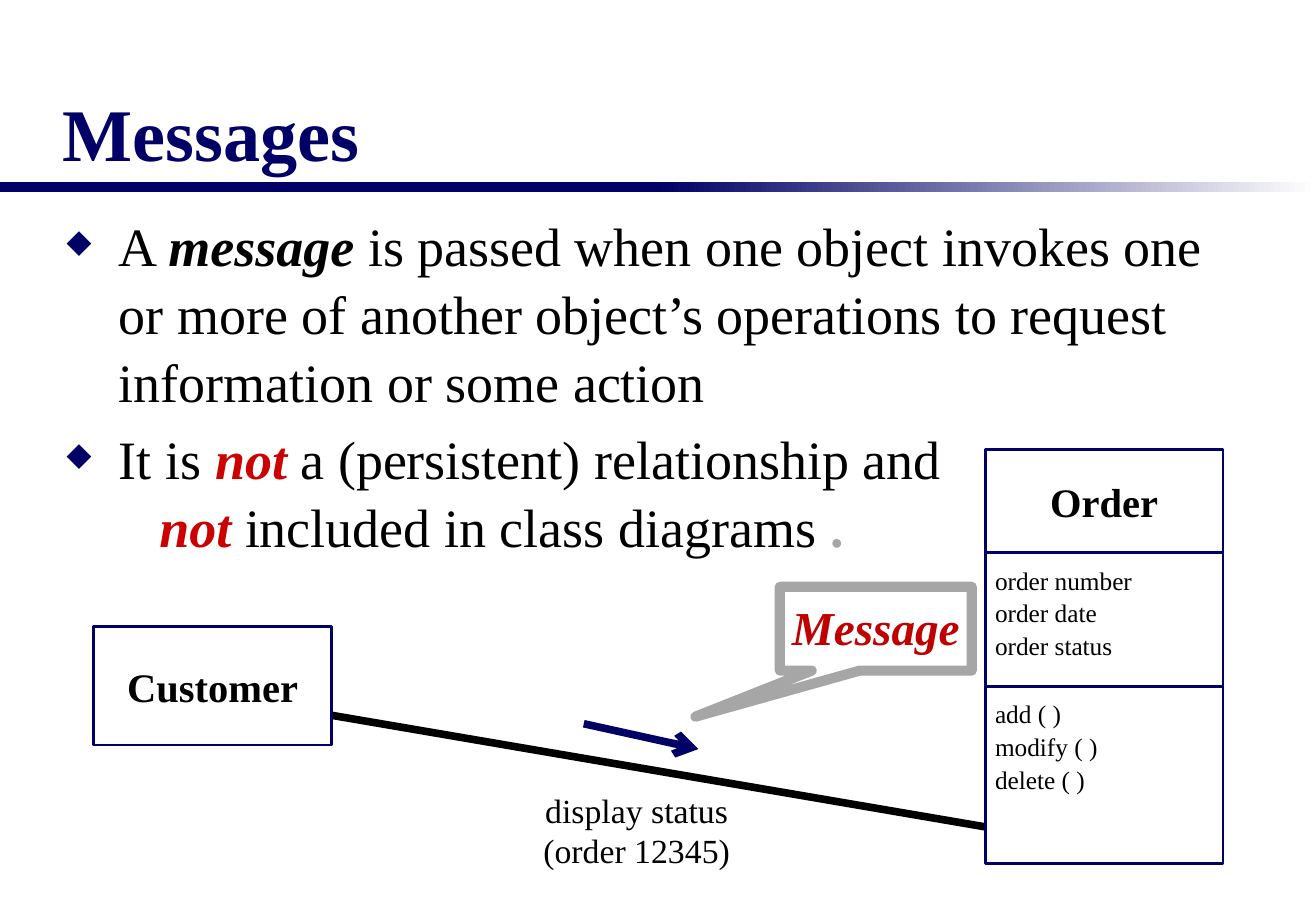
from collections import namedtuple
from dataclasses import dataclass

from lxml import etree
from pptx import Presentation
from pptx import util as u
from pptx.dml.color import RGBColor
from pptx.enum import shapes, text
from pptx.oxml.ns import qn

Box = namedtuple("Box", "left top width height")
Pt = u.Pt


@dataclass(frozen=True)
class Theme:
    font: str = "Times New Roman"
    navy: str = "000066"
    black: str = "000000"
    white: str = "FFFFFF"
    grey: str = "A6A6A6"
    red: str = "CC0000"
    dark_red: str = "C00000"
    title: float = 44
    body: float = 32
    callout: float = 28
    name: float = 24
    label: float = 20
    member: float = 15
    outline: float = 1.5
    heavy: float = 4.5
    frame: float = 6


THEME = Theme()


def color(code):
    return RGBColor.from_string(code)


def lengths(box):
    return [Pt(value) for value in box]


def add_span(para, words, size, ink=THEME.black, bold=False, italic=False):
    span = para.add_run()
    span.text = words
    span.font.name = THEME.font
    span.font.size = Pt(size)
    span.font.color.rgb = color(ink)
    span.font.bold = bold
    span.font.italic = italic


def set_frame(shape, insets=(0, 0, 0, 0), anchor=text.MSO_ANCHOR.TOP, wrap=True):
    frame = shape.text_frame
    frame.word_wrap = wrap
    frame.vertical_anchor = anchor
    frame.margin_left, frame.margin_top, frame.margin_right, frame.margin_bottom = map(Pt, insets)
    return frame


def write_lines(frame, lines, align=text.PP_ALIGN.LEFT, after=0, spacing=1, **style):
    for index, words in enumerate(lines):
        para = frame.paragraphs[0] if index == 0 else frame.add_paragraph()
        para.alignment = align
        para.space_after = Pt(after)
        para.line_spacing = spacing
        add_span(para, words, **style)


def add_panel(page, box, kind=shapes.MSO_SHAPE.RECTANGLE, fill=None, line=None, weight=THEME.outline):
    panel = page.shapes.add_shape(kind, *lengths(box))
    panel.shadow.inherit = False
    if fill:
        panel.fill.solid()
        panel.fill.fore_color.rgb = color(fill)
    else:
        panel.fill.background()
    if line:
        panel.line.color.rgb = color(line)
        panel.line.width = Pt(weight)
    else:
        panel.line.fill.background()
    return panel


def add_line(page, start, end, ink, arrow=False):
    line = page.shapes.add_connector(shapes.MSO_CONNECTOR.STRAIGHT, *lengths(start + end))
    line.line.color.rgb = color(ink)
    line.line.width = Pt(THEME.heavy)
    if arrow:
        etree.SubElement(line.line._get_or_add_ln(), qn("a:tailEnd"), type="arrow")
    etree.SubElement(line._element.spPr, qn("a:effectLst"))


def add_rule(page, box):
    half = box.width / 2
    add_panel(page, box._replace(width=half), fill=THEME.navy)
    fade = add_panel(page, box._replace(left=box.left + half, width=half))
    fade.fill.gradient()
    fade.fill.gradient_angle = 0
    for stop, position, ink in zip(fade.fill.gradient_stops, (0, 1), (THEME.navy, THEME.white)):
        stop.position = position
        stop.color.rgb = color(ink)


def add_title(page, box, words):
    title = page.shapes.add_textbox(*lengths(box))
    frame = set_frame(title, (7.2, 3.6, 7.2, 3.6), text.MSO_ANCHOR.BOTTOM)
    write_lines(frame, [words], size=THEME.title, ink=THEME.navy, bold=True)


def add_bullet(para):
    props = para._p.get_or_add_pPr()
    props.set("indent", str(-Pt(31)))
    tint = etree.SubElement(props, qn("a:buClr"))
    etree.SubElement(tint, qn("a:srgbClr"), val=THEME.navy)
    etree.SubElement(props, qn("a:buSzPct"), val="60000")
    etree.SubElement(props, qn("a:buChar"), char="◆")


def add_point(page, box, rows):
    body = page.shapes.add_textbox(*lengths(box))
    frame = set_frame(body, (7.2, 3.6, 7.2, 3.6))
    for index, spans in enumerate(rows):
        para = frame.paragraphs[0] if index == 0 else frame.add_paragraph()
        para.line_spacing = 1.05
        para._p.get_or_add_pPr().set("marL", str(Pt(55 if index else 31)))
        if index == 0:
            add_bullet(para)
        for words, style in spans:
            add_span(para, words, THEME.body, **style)


def add_class(page, box, name, compartments=()):
    head = add_panel(page, box, fill=THEME.white, line=THEME.navy)
    frame = set_frame(head, anchor=text.MSO_ANCHOR.MIDDLE)
    write_lines(frame, [name], text.PP_ALIGN.CENTER, size=THEME.name, bold=True)
    top = box.top + box.height
    for height, members in compartments:
        part = add_panel(page, box._replace(top=top, height=height), fill=THEME.white, line=THEME.navy)
        frame = set_frame(part, (5.8, 7.2, 0, 0))
        write_lines(frame, members, after=1.5, size=THEME.member)
        top += height


def add_message(page, box, lines):
    left, top, width, height = box
    add_line(page, (left, top), (left + width, top + height), THEME.black)
    label = page.shapes.add_textbox(*lengths(Box(left + 183.6, top + 54, 111.6, 48)))
    frame = set_frame(label, wrap=False)
    write_lines(frame, lines, text.PP_ALIGN.CENTER, size=THEME.label)
    add_line(page, (left + 208, top + 15), (left + 276, top + 30), THEME.navy, arrow=True)


def add_callout(page, box, words):
    callout = add_panel(page, box, shapes.MSO_SHAPE.RECTANGULAR_CALLOUT, line=THEME.grey, weight=THEME.frame)
    callout.adjustments[0] = -0.94
    callout.adjustments[1] = 1.05
    frame = set_frame(callout)
    write_lines(frame, [words], text.PP_ALIGN.CENTER, spacing=1.2, size=THEME.callout,
                ink=THEME.dark_red, bold=True, italic=True)


def build_messages(deck):
    page = deck.slides.add_slide(deck.slide_layouts[6])
    strong = dict(bold=True, italic=True)
    negative = dict(strong, ink=THEME.red)
    add_rule(page, Box(0, 108, 780, 5.8))
    add_message(page, Box(138, 414, 492, 84), ["display status", "(order 12345)"])
    add_callout(page, Box(462.2, 347.8, 113.8, 49.7), "Message")
    add_point(page, Box(32.4, 120.6, 712, 126), [
        [("A ", {}), ("message", strong),
         (" is passed when one object invokes one or more of another object’s operations"
          " to request information or some action", {})],
    ])
    add_title(page, Box(30.2, 21, 720, 87), "Messages")
    add_class(page, Box(55.5, 371.5, 141, 70), "Customer")
    add_class(page, Box(584, 266.4, 141, 61.2), "Order", [
        (79.2, ["order number", "order date", "order status"]),
        (105, ["add ( )", "modify ( )", "delete ( )"]),
    ])
    add_point(page, Box(32.4, 246.6, 538, 102), [
        [("It is ", {}), ("not ", negative), ("a (persistent) relationship and", {})],
        [("not", negative), (" included in class diagrams", {}),
         (" .", dict(ink=THEME.grey, bold=True))],
    ])


def main():
    deck = Presentation()
    deck.slide_width, deck.slide_height = Pt(780), Pt(540)
    build_messages(deck)
    deck.save("out.pptx")


if __name__ == "__main__":
    main()
